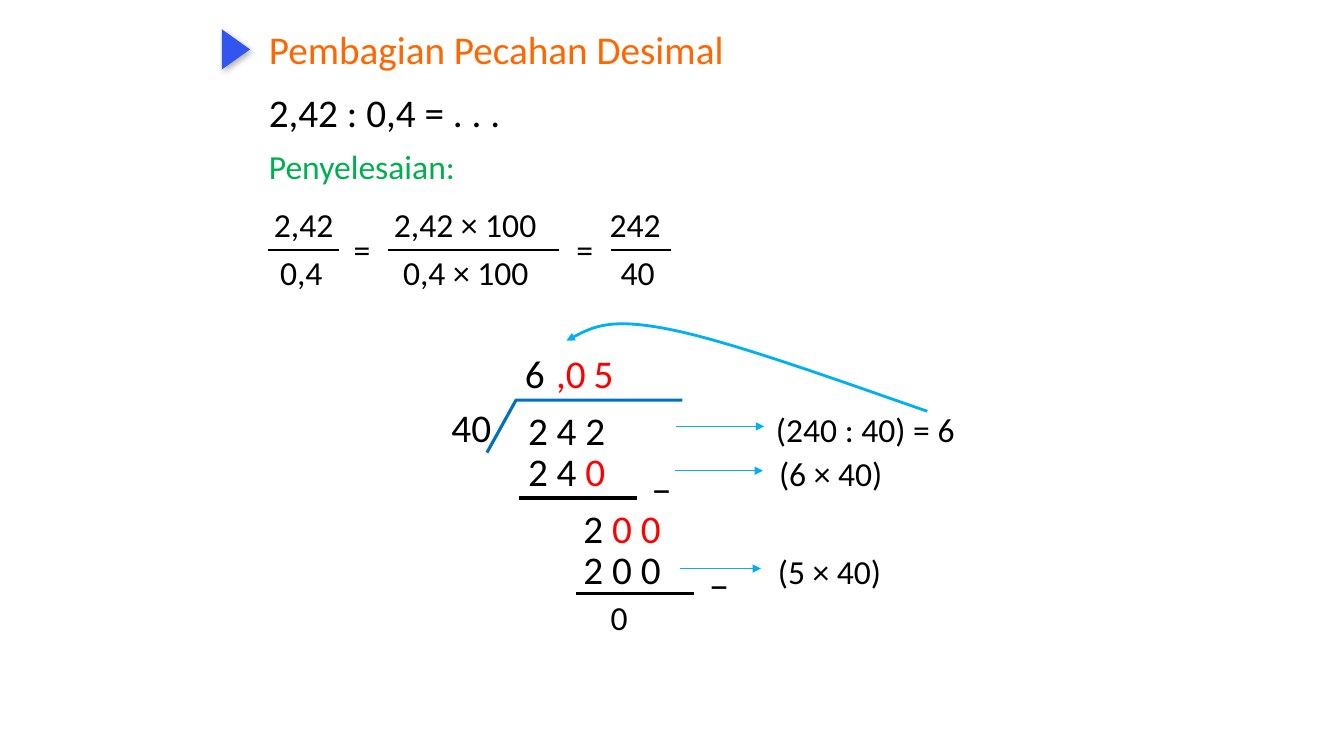
from dataclasses import dataclass

from lxml import etree
from pptx import Presentation
from pptx import util as u
from pptx.dml.color import RGBColor
from pptx.enum import shapes, text
from pptx.oxml import ns

HUES = {
    "black": "000000", "red": "FF0000", "green": "00B050", "orange": "FF6600",
    "blue": "0070C0", "sky": "00B0F0", "royal": "3155ED",
}
HIGH = {24: 36.3, 28: 41.2}
FRAME = {"word_wrap": False, "auto_size": text.MSO_AUTO_SIZE.SHAPE_TO_FIT_TEXT}
TITLE = {
    "word_wrap": True,
    "auto_size": text.MSO_AUTO_SIZE.NONE,
    "vertical_anchor": text.MSO_ANCHOR.MIDDLE,
}


@dataclass
class Label:
    x: float
    y: float
    wide: float
    words: str
    size: int = 28
    hue: str = "black"
    tail: str = ""


@dataclass
class Ratio:
    top: Label
    low: Label
    left: float
    right: float


@dataclass
class Note:
    label: Label
    start: float
    end: float
    y: float


@dataclass
class Minus:
    x: float
    y: float


def color(name: str) -> RGBColor:
    return RGBColor.from_string(HUES[name])


def apply(item, form: dict) -> None:
    for key, value in form.items():
        setattr(item, key, value)


def add_node(parent, tag: str, **attrs: str):
    node = etree.SubElement(parent, ns.qn(tag))
    for key, value in attrs.items():
        node.set(key, value)
    return node


def write(slide, label: Label, high: float = 0, form: dict = FRAME):
    box = slide.shapes.add_textbox(
        u.Pt(label.x), u.Pt(label.y), u.Pt(label.wide), u.Pt(high or HIGH[label.size]))
    apply(box.text_frame, form)
    para = box.text_frame.paragraphs[0]
    for words, hue in ((label.words, label.hue), (label.tail, "red")):
        if words:
            run = para.add_run()
            run.text = words
            apply(run.font, {"name": "Calibri", "size": u.Pt(label.size)})
            run.font.color.rgb = color(hue)
    return para


def ink(item, hue: str, width: float, arrow: bool = False) -> None:
    item.line.color.rgb = color(hue)
    item.line.width = u.Pt(width)
    if arrow:
        add_node(item.line._get_or_add_ln(), "a:tailEnd", type="triangle")


def rule(slide, left: float, right: float, y: float, hue: str = "black",
         width: float = 1.5, arrow: bool = False) -> None:
    line = slide.shapes.add_connector(
        shapes.MSO_CONNECTOR.STRAIGHT, u.Pt(left), u.Pt(y), u.Pt(right), u.Pt(y))
    ink(line, hue, width, arrow)
    add_node(line._element.spPr, "a:effectLst")


def trace(slide, dots: list[tuple[float, float]], hue: str, width: float,
          arrow: bool = False):
    first, *rest = [(u.Pt(x), u.Pt(y)) for x, y in dots]
    pen = slide.shapes.build_freeform(*first)
    pen.add_line_segments(rest, close=False)
    item = pen.convert_to_shape()
    item.fill.background()
    item.shadow.inherit = False
    ink(item, hue, width, arrow)
    return item


def bend(item) -> None:
    legs = list(item._element.iter(ns.qn("a:lnTo")))
    for i in range(0, len(legs), 3):
        curve = etree.Element(ns.qn("a:cubicBezTo"))
        legs[i].addprevious(curve)
        for leg in legs[i:i + 3]:
            curve.append(leg[0])
            leg.getparent().remove(leg)


def mark(slide) -> None:
    item = slide.shapes.add_shape(
        shapes.MSO_SHAPE.ISOSCELES_TRIANGLE,
        u.Pt(154.1), u.Pt(25.2), u.Pt(28.8), u.Pt(20.2))
    item.rotation = 90
    item.fill.solid()
    item.fill.fore_color.rgb = color("royal")
    item.line.fill.background()
    item.shadow.inherit = False
    glow = add_node(
        item._element.spPr.find(ns.qn("a:effectLst")), "a:outerShdw",
        blurRad=str(u.Pt(4.5)), dist=str(u.Pt(2.6)), dir=str(53 * 60000),
        rotWithShape="0")
    shade = add_node(glow, "a:srgbClr", val=HUES["black"])
    add_node(shade, "a:alpha", val="30000")


LABELS = [
    Label(185, 59.8, 182.9, "2,42 : 0,4 = . . ."),
    Label(185, 100.8, 149, "Penyelesaian:", 24, "green"),
    Label(245.5, 159.8, 26.6, "=", 24),
    Label(404.6, 159.8, 26.6, "=", 24),
    Label(370.1, 286.6, 70.6, "2 4 2"),
    Label(315.4, 284.4, 43.2, "40"),
    Label(370.1, 316.1, 70.6, "2 4 ", tail="0"),
    Label(367.9, 246.2, 28.8, "6"),
    Label(390.2, 246.2, 36, ",0", hue="red"),
    Label(416.9, 246.2, 28.8, "5", hue="red"),
    Label(409.7, 356.4, 70.6, "2 ", tail="0 0"),
    Label(409.7, 385.9, 70.6, "2 0 0"),
    Label(429.1, 422.6, 26.6, "0", 24),
]
TOP, LOW, BAR = 141.8, 176.4, 178.6
RATIOS = [
    Ratio(Label(188.6, TOP, 57.6, "2,42", 24),
          Label(193, LOW, 45.4, "0,4", 24), 191.5, 241.9),
    Ratio(Label(274.3, TOP, 118.8, "2,42 × 100", 24),
          Label(280.8, LOW, 106.6, "0,4 × 100", 24), 277.2, 399.6),
    Ratio(Label(428.4, TOP, 51.1, "242", 24),
          Label(436.3, LOW, 38.9, "40", 24), 436.3, 479.5),
]
NOTES = [
    Note(Label(547.2, 288.7, 142.6, "(240 : 40) = 6", 24), 483.1, 545.8, 304.6),
    Note(Label(549.4, 319.7, 90.7, "(6 × 40)", 24), 482.4, 545, 336.2),
    Note(Label(548.6, 390.2, 90.7, "(5 × 40)", 24), 486, 543.6, 406.1),
]
SIGNS = [Minus(370.8, 355.7), Minus(411.8, 424.1)]
HOUSE = [(347.8, 323.3), (368.6, 285.8), (487.4, 285.8)]
SWEEP = [(662.4, 293.8), (591.8, 269.3), (522, 244.1), (478.8, 235.4),
         (436.3, 226.8), (420.5, 234.7), (404.6, 243.4)]


def main() -> None:
    deck = Presentation()
    apply(deck, {"slide_width": u.Pt(960), "slide_height": u.Pt(540)})
    slide = deck.slides.add_slide(deck.slide_layouts[6])
    head = Label(185, 13, 384.5, "Pembagian Pecahan Desimal", hue="orange")
    write(slide, head, 47.5, TITLE).line_spacing = 0.9
    mark(slide)
    for label in LABELS:
        write(slide, label)
    for ratio in RATIOS:
        write(slide, ratio.top)
        write(slide, ratio.low)
        rule(slide, ratio.left, ratio.right, BAR)
    for sign in SIGNS:
        rule(slide, sign.x, sign.x + 84.2, sign.y, width=2.25)
        write(slide, Label(sign.x + 87.8, sign.y - 26.7, 28.8, "−"))
    for note in NOTES:
        write(slide, note.label)
        rule(slide, note.start, note.end, note.y, "sky", 0.25, True)
    trace(slide, HOUSE, "blue", 2.25)
    bend(trace(slide, SWEEP, "sky", 2, True))
    deck.save("out.pptx")


if __name__ == "__main__":
    main()
